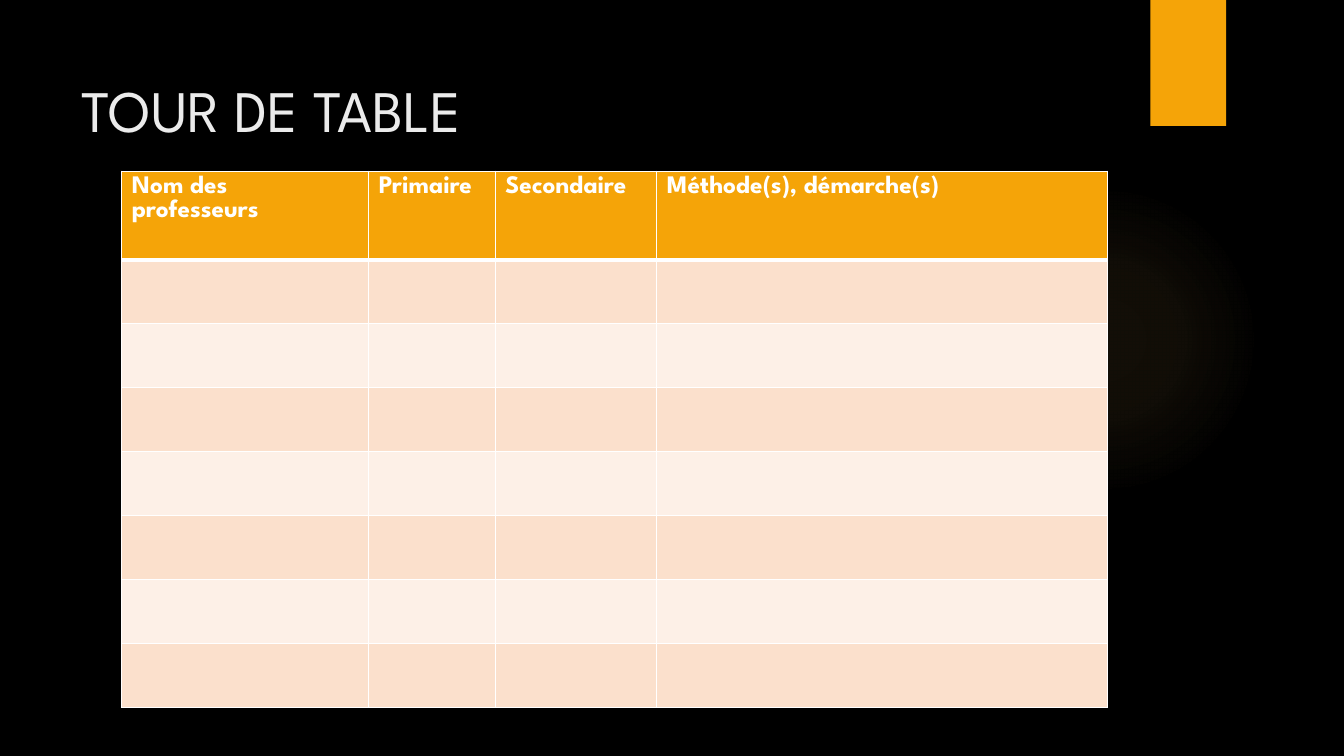
from lxml import etree
from pptx import Presentation
from pptx.dml.color import RGBColor
from pptx.enum.shapes import MSO_SHAPE
from pptx.enum.text import MSO_ANCHOR
from pptx.oxml import parse_xml
from pptx.oxml.ns import qn
from pptx.util import Pt

RECTANGLE = MSO_SHAPE.RECTANGLE
ELLIPSE = MSO_SHAPE.OVAL
TOP = MSO_ANCHOR.TOP
FONT = "League Spartan"
NAMESPACE = "http://schemas.openxmlformats.org/drawingml/2006/main"
COLORS = {
    "background": "000000",
    "accent": "F5A408",
    "glow": "FAC96A",
    "title": "EBEBEB",
    "white": "FFFFFF",
    "odd_row": "FBE0CC",
    "even_row": "FDF0E7",
}
HEADERS = ["Nom des professeurs", "Primaire", "Secondaire", "Méthode(s), démarche(s)"]
COLUMN_WIDTHS = [176.4, 90.4, 115.4, 322]
HEADER_HEIGHT = 63.4
ROW_HEIGHT = 45.65
BODY_ROWS = 7
GLOW_STOPS = [(0, 7), (36, 6), (69, 0)]


def rgb(name):
    return RGBColor.from_string(COLORS[name])


def format_text(text_frame, size, color, bold=False):
    for paragraph in text_frame.paragraphs:
        for run in paragraph.runs:
            run.font.name = FONT
            run.font.size = Pt(size)
            run.font.bold = bold
            run.font.color.rgb = rgb(color)


def add_plain_shape(slide, kind, left, top, width, height, color):
    shape = slide.shapes.add_shape(kind, Pt(left), Pt(top), Pt(width), Pt(height))
    shape.shadow.inherit = False
    shape.line.fill.background()
    shape.fill.solid()
    shape.fill.fore_color.rgb = rgb(color)
    return shape


def add_glow(slide, left, top, diameter):
    shape = add_plain_shape(slide, ELLIPSE, left, top, diameter, diameter, "glow")
    stops = "".join(
        f'<a:gs pos="{position * 1000}"><a:srgbClr val="{COLORS["glow"]}">'
        f'<a:alpha val="{opacity * 1000}"/></a:srgbClr></a:gs>'
        for position, opacity in GLOW_STOPS
    )
    gradient = parse_xml(
        f'<a:gradFill xmlns:a="{NAMESPACE}" rotWithShape="1"><a:gsLst>{stops}</a:gsLst>'
        '<a:path path="circle"><a:fillToRect l="50000" t="50000" r="50000" b="50000"/>'
        "</a:path></a:gradFill>"
    )
    properties = shape.element.spPr
    properties.replace(properties.find(qn("a:solidFill")), gradient)


def add_title(slide, text, left, top, width, height):
    box = slide.shapes.add_textbox(Pt(left), Pt(top), Pt(width), Pt(height))
    text_frame = box.text_frame
    text_frame.word_wrap = True
    text_frame.vertical_anchor = TOP
    text_frame.margin_top = Pt(16.5)
    text_frame.text = text
    format_text(text_frame, 42, "title")


def set_borders(cell, top, bottom):
    properties = cell._tc.get_or_add_tcPr()
    for side, width in (("L", 1), ("R", 1), ("T", top), ("B", bottom)):
        line = etree.SubElement(properties, qn(f"a:ln{side}"), w=str(Pt(width)))
        fill = etree.SubElement(line, qn("a:solidFill"))
        etree.SubElement(fill, qn("a:srgbClr"), val=COLORS["white"])


def fill_cell(cell, color):
    cell.fill.solid()
    cell.fill.fore_color.rgb = rgb(color)


def add_teacher_table(slide, left, top):
    height = HEADER_HEIGHT + BODY_ROWS * ROW_HEIGHT
    table = slide.shapes.add_table(
        BODY_ROWS + 1, len(HEADERS), Pt(left), Pt(top), Pt(sum(COLUMN_WIDTHS)), Pt(height)
    ).table
    for column, width in zip(table.columns, COLUMN_WIDTHS):
        column.width = Pt(width)
    for index, row in enumerate(table.rows):
        row.height = Pt(ROW_HEIGHT if index else HEADER_HEIGHT)
        color = ("odd_row" if index % 2 else "even_row") if index else "accent"
        for cell in row.cells:
            set_borders(cell, 3 if index == 1 else 1, 1 if index else 3)
            fill_cell(cell, color)
    for cell, header in zip(table.rows[0].cells, HEADERS):
        cell.text_frame.text = header
        format_text(cell.text_frame, 18, "white", bold=True)


def main():
    presentation = Presentation()
    presentation.slide_width = Pt(960)
    presentation.slide_height = Pt(540)
    slide = presentation.slides.add_slide(presentation.slide_layouts[6])
    slide.background.fill.solid()
    slide.background.fill.fore_color.rgb = rgb("background")
    add_glow(slide, 677.5, 131.75, 221.75)
    add_plain_shape(slide, RECTANGLE, 821.75, 0, 54, 90, "accent")
    add_title(slide, "TOUR DE TABLE", 51, 36, 741, 110)
    add_teacher_table(slide, 87, 122.25)
    presentation.save("out.pptx")


if __name__ == "__main__":
    main()
